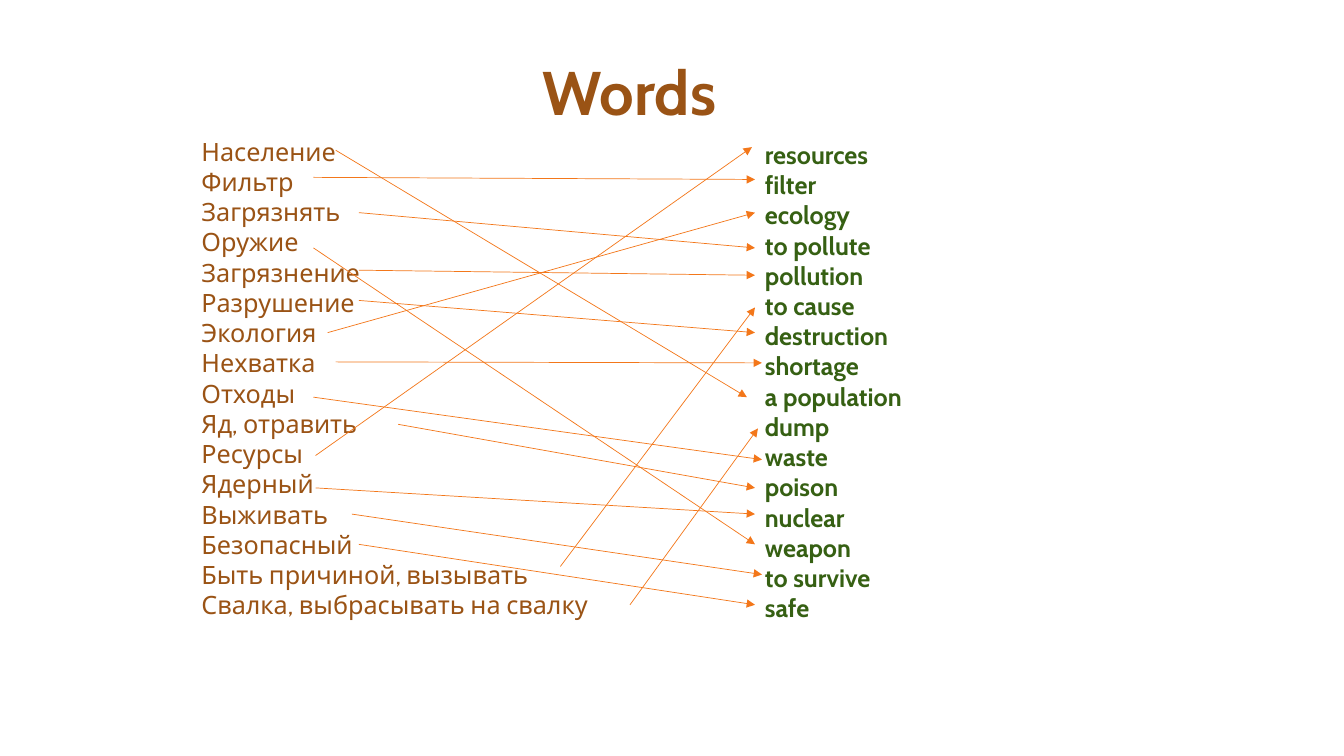
from lxml import etree
from pptx import Presentation
from pptx.dml.color import RGBColor
from pptx.enum.shapes import MSO_CONNECTOR as Connector
from pptx.enum.text import MSO_AUTO_SIZE as AutoSize, PP_ALIGN as Align
from pptx.oxml.ns import qn
from pptx.util import Pt

COLOURS = {"brown": "9A5315", "green": "366013", "orange": "F3771A"}
FONT = "Cabin"

HEADING = "Words"
# Russian word, arrow start and arrow end (x, y in points)
RUSSIAN = [
    ("Население", (239.8, 107.3), (533.5, 283.7)),
    ("Фильтр", (223.9, 126.7), (539.3, 128.2)),
    ("Загрязнять", (256.3, 151.9), (539.3, 177.1)),
    ("Оружие", (223.9, 177.1), (539.3, 388.8)),
    ("Загрязнение", (256.3, 193), (539.3, 196.6)),
    ("Разрушение", (256.3, 214.6), (539.3, 237.6)),
    ("Экология", (234, 237.6), (539.3, 151.9)),
    ("Нехватка", (239.8, 258.5), (544.3, 259.2)),
    ("Отходы", (223.9, 283.7), (544.3, 328.3)),
    ("Яд, отравить", (284.4, 303.1), (539.3, 348.5)),
    ("Ресурсы", (225.4, 325.4), (537.1, 105.1)),
    ("Ядерный", (225.4, 348.5), (539.3, 367.2)),
    ("Выживать", (251.3, 367.2), (544.3, 410.4)),
    ("Безопасный", (256.3, 388.8), (539.3, 432)),
    ("Быть причиной, вызывать", (400.3, 404.6), (539.3, 219.6)),
    ("Свалка, выбрасывать на свалку", (450, 432), (541.4, 306)),
]
ENGLISH = [
    "resources", "filter", "ecology", "to pollute", "pollution", "to cause",
    "destruction", "shortage", "a population", "dump", "waste", "poison",
    "nuclear", "weapon", "to survive", "safe",
]

deck = Presentation()
deck.slide_width, deck.slide_height = Pt(960), Pt(540)
slide = deck.slides.add_slide(deck.slide_layouts[6])


def add_words(words, box, size, colour, bold=False, align=Align.LEFT):
    frame = slide.shapes.add_textbox(*map(Pt, box)).text_frame
    frame.word_wrap = True
    frame.auto_size = AutoSize.SHAPE_TO_FIT_TEXT
    frame.text = "\n".join(words)
    for line in frame.paragraphs:
        line.alignment = align
        line.font.name = FONT
        line.font.size = Pt(size)
        line.font.bold = bold
        line.font.color.rgb = RGBColor.from_string(COLOURS[colour])


def add_arrow(start, end):
    arrow = slide.shapes.add_connector(Connector.STRAIGHT, *map(Pt, start + end))
    arrow.line.width = Pt(0.5)
    arrow.line.color.rgb = RGBColor.from_string(COLOURS["orange"])
    etree.SubElement(arrow.line._get_or_add_ln(), qn("a:tailEnd"), type="triangle")
    etree.SubElement(arrow._element.spPr, qn("a:effectLst"))


# Heading and the two word columns
add_words([HEADING], (239.8, 35.3, 419.8, 60.5), 44, "brown", True, Align.CENTER)
add_words([word for word, _, _ in RUSSIAN], (136.8, 93.6, 321.1, 399.6), 18, "brown")
add_words(ENGLISH, (539.3, 95.8, 244.8, 356.4), 18, "green", True)

# Arrows from each Russian word to its translation
for _, start, end in RUSSIAN:
    add_arrow(start, end)

deck.save("out.pptx")
